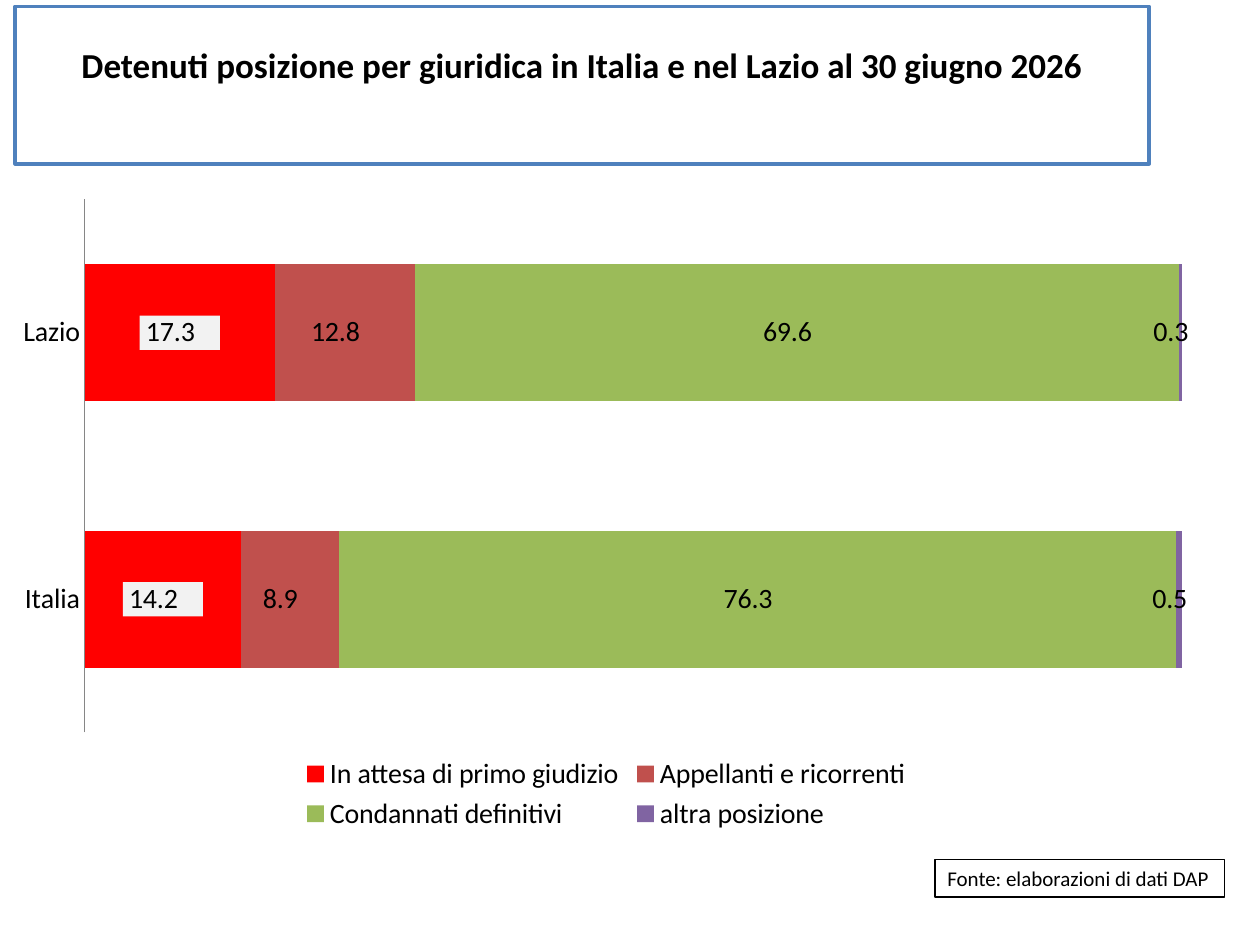
"""Build the slide on the legal status of prisoners in Italy and Lazio."""
import pptx
import pptx.chart.data
import pptx.dml.color
import pptx.enum.chart
import pptx.enum.shapes
import pptx.enum.text
import pptx.oxml
import pptx.util


def color(hex_string):
    """Turn a hex string into a colour."""
    return pptx.dml.color.RGBColor.from_string(hex_string)


def paint(shape, line_color, line_width):
    """Give a shape a white fill and a plain outline."""
    shape.fill.solid()
    shape.fill.fore_color.rgb = color("FFFFFF")
    shape.line.color.rgb = color(line_color)
    shape.line.width = pptx.util.Pt(line_width)


presentation = pptx.Presentation()
presentation.slide_width = pptx.util.Inches(10)
presentation.slide_height = pptx.util.Inches(7.5)
slide = presentation.slides.add_slide(presentation.slide_layouts[5])

title = slide.shapes.title
title.left, title.top = pptx.util.Inches(0.12), pptx.util.Inches(0.05)
title.width, title.height = pptx.util.Inches(9), pptx.util.Inches(1.25)
paint(title, "4F81BD", 2)
title.text_frame.text = "Detenuti posizione per giuridica in Italia e nel Lazio al 30 giugno 2026"
title.text_frame.vertical_anchor = pptx.enum.text.MSO_ANCHOR.MIDDLE
title.text_frame.margin_bottom = pptx.util.Inches(0.38)
paragraph = title.text_frame.paragraphs[0]
paragraph.alignment = pptx.enum.text.PP_ALIGN.CENTER
paragraph.font.name = "Calibri"
paragraph.font.size = pptx.util.Pt(20)
paragraph.font.bold = True
paragraph.font.color.rgb = color("000000")

source = slide.shapes.add_textbox(
    pptx.util.Inches(7.42), pptx.util.Inches(6.82), pptx.util.Inches(2.3), pptx.util.Inches(0.3))
paint(source, "000000", 0.75)
source.text_frame.text = "Fonte: elaborazioni di dati DAP"
source.text_frame.word_wrap = False
source.text_frame.auto_size = pptx.enum.text.MSO_AUTO_SIZE.SHAPE_TO_FIT_TEXT
paragraph = source.text_frame.paragraphs[0]
paragraph.font.name = "Calibri"
paragraph.font.size = pptx.util.Pt(12)
paragraph.font.color.rgb = color("000000")

number_format = r'_-* #,##0.0\ _€_-;\-* #,##0.0\ _€_-;_-* "-"??\ _€_-;_-@_-'
positions = [
    ("In attesa di primo giudizio", (17.3, 14.2), "FF0000"),
    ("Appellanti e ricorrenti", (12.8, 8.9), "C0504D"),
    ("Condannati definitivi", (69.6, 76.3), "9BBB59"),
    ("altra posizione", (0.3, 0.5), "8064A2"),
]
chart_data = pptx.chart.data.CategoryChartData(number_format=number_format)
chart_data.categories = ["Lazio", "Italia"]
for name, values, fill in positions:
    chart_data.add_series(name, values)
chart = slide.shapes.add_chart(
    pptx.enum.chart.XL_CHART_TYPE.BAR_STACKED_100, 0, pptx.util.Inches(1.48),
    pptx.util.Inches(9.63), pptx.util.Inches(5.16), chart_data).chart
chart.has_title = False
chart.font.name = "Calibri"
chart.font.size = pptx.util.Pt(16)
chart.font.color.rgb = color("000000")
chart.has_legend = True
chart.legend.position = pptx.enum.chart.XL_LEGEND_POSITION.BOTTOM
chart.legend.include_in_layout = False

category_axis = chart.category_axis
category_axis.reverse_order = True
category_axis.major_tick_mark = pptx.enum.chart.XL_TICK_MARK.NONE
category_axis.format.line.color.rgb = color("868686")
chart.value_axis.visible = False
chart.value_axis.has_major_gridlines = False

plot = chart.plots[0]
plot.gap_width = 95
plot.overlap = 100
for series, (name, values, fill) in zip(plot.series, positions):
    series.format.fill.solid()
    series.format.fill.fore_color.rgb = color(fill)
    labels = series.data_labels
    labels.show_value = True
    labels.number_format = number_format
    labels.number_format_is_linked = False

label_fill = pptx.oxml.parse_xml(
    '<c:spPr xmlns:c="http://schemas.openxmlformats.org/drawingml/2006/chart" '
    'xmlns:a="http://schemas.openxmlformats.org/drawingml/2006/main">'
    '<a:solidFill><a:srgbClr val="F2F2F2"/></a:solidFill></c:spPr>')
first_labels = plot.series[0].data_labels._element
first_labels.find(pptx.oxml.ns.qn("c:numFmt")).addnext(label_fill)

plot_area = chart._chartSpace.chart.plotArea
for layout in plot_area.findall(pptx.oxml.ns.qn("c:layout")):
    plot_area.remove(layout)
plot_area.insert(0, pptx.oxml.parse_xml(
    '<c:layout xmlns:c="http://schemas.openxmlformats.org/drawingml/2006/chart"><c:manualLayout>'
    '<c:layoutTarget val="inner"/><c:xMode val="edge"/><c:yMode val="edge"/>'
    '<c:x val="0.07"/><c:y val="0.02"/><c:w val="0.905"/><c:h val="0.82"/>'
    '</c:manualLayout></c:layout>'))

presentation.save("out.pptx")
